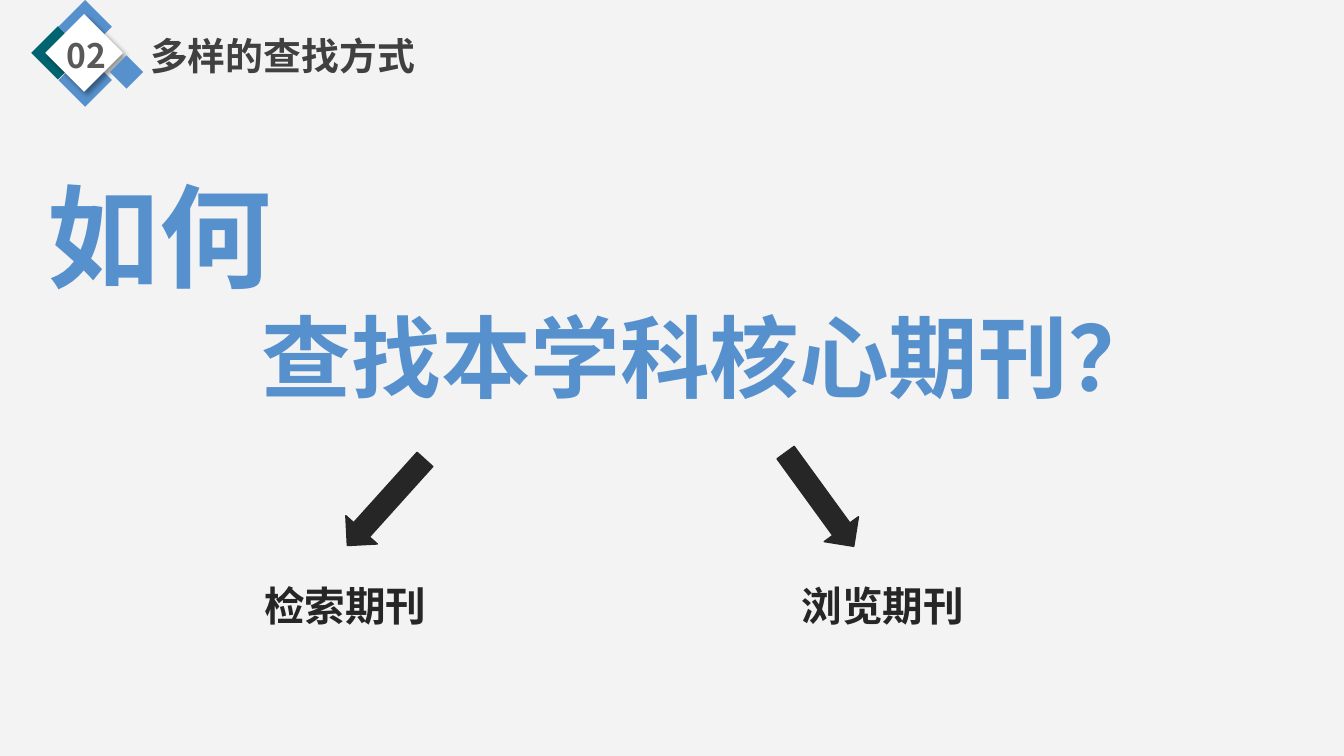
from dataclasses import dataclass

from lxml import etree
from pptx import Presentation
from pptx import util as u
from pptx.dml import color
from pptx.enum import shapes, text
from pptx.oxml import ns

PX = 9144
FONT = "Noto Sans CJK SC"
HUES = {
    "back": "F3F3F3",
    "blue": "5791CD",
    "teal": "006470",
    "white": "FFFFFF",
    "ink": "262626",
    "title": "404040",
    "badge": "595959",
    "shade": "000000",
}


@dataclass(frozen=True)
class Line:
    words: str
    size: int
    hue: str
    mid: bool = True
    shift: int = 0


@dataclass(frozen=True)
class Label:
    left: int
    top: int
    width: int
    height: int
    lines: tuple[Line, ...]
    wrap: bool = True
    grow: bool = True


@dataclass(frozen=True)
class Tile:
    x: int
    y: int
    side: int
    hue: str
    shade: bool = False


@dataclass(frozen=True)
class Arrow:
    left: int
    top: int
    turn: int


LABELS = (
    Label(34, 159, 1266, 283, (
        Line("如何", 80, "blue", mid=False),
        Line("查找本学科核心期刊？", 64, "blue", shift=74),
    )),
    Label(123, 569, 439, 63, (Line("检索期刊", 29, "ink"),)),
    Label(656, 569, 439, 63, (Line("浏览期刊", 29, "ink"),)),
    Label(136, 25, 292, 59, (Line("多样的查找方式", 27, "title", mid=False),), wrap=False),
)
BADGE = Label(49, 30, 74, 38, (Line("02", 24, "badge"),), grow=False)
ARROWS = (Arrow(362, 441, 42), Arrow(792, 438, 324))
TILES = (
    Tile(31, 26, 53, "teal"),
    Tile(58, 0, 53, "blue"),
    Tile(58, 53, 53, "blue"),
    Tile(45, 14, 77, "white", shade=True),
    Tile(109, 55, 33, "blue"),
)


def px(*sizes: int) -> list[u.Emu]:
    return [u.Emu(size * PX) for size in sizes]


def rgb(hue: str) -> color.RGBColor:
    return color.RGBColor.from_string(HUES[hue])


def write(para, line: Line) -> None:
    para.text = line.words
    para.alignment = text.PP_ALIGN.CENTER if line.mid else text.PP_ALIGN.LEFT
    if line.shift:
        props = para._p.get_or_add_pPr()
        props.set("marL", str(line.shift * PX))
        props.set("indent", "0")
    font = para.runs[0].font
    font.name, font.size, font.bold = FONT, u.Pt(line.size), True
    font.color.rgb = rgb(line.hue)
    east = etree.SubElement(font._element, ns.qn("a:ea"))
    east.set("typeface", FONT)


def draw_label(slide, label: Label) -> None:
    box = slide.shapes.add_textbox(*px(label.left, label.top, label.width, label.height))
    frame = box.text_frame
    frame.word_wrap = label.wrap
    if label.grow:
        frame.auto_size = text.MSO_AUTO_SIZE.SHAPE_TO_FIT_TEXT
        frame.margin_left, frame.margin_right = px(13, 13)
        frame.margin_top, frame.margin_bottom = px(7, 7)
    for spot, line in enumerate(label.lines):
        write(frame.add_paragraph() if spot else frame.paragraphs[0], line)


def add_solid(slide, kind, left: int, top: int, width: int, height: int, hue: str):
    shape = slide.shapes.add_shape(kind, *px(left, top, width, height))
    shape.shadow.inherit = False
    shape.fill.solid()
    shape.fill.fore_color.rgb = rgb(hue)
    return shape


def cast(shape) -> None:
    effects = shape._element.spPr.find(ns.qn("a:effectLst"))
    shadow = etree.SubElement(effects, ns.qn("a:outerShdw"))
    for key, value in (("blurRad", u.Pt(4)), ("dist", u.Pt(3)), ("dir", 45 * 60000)):
        shadow.set(key, str(int(value)))
    shadow.set("algn", "tl")
    shadow.set("rotWithShape", "0")
    tint = etree.SubElement(shadow, ns.qn("a:srgbClr"))
    tint.set("val", HUES["shade"])
    etree.SubElement(tint, ns.qn("a:alpha")).set("val", "40000")


def draw_tile(slide, tile: Tile) -> None:
    kind = shapes.MSO_SHAPE.DIAMOND
    shape = add_solid(slide, kind, tile.x, tile.y, tile.side, tile.side, tile.hue)
    shape.line.fill.background()
    if tile.shade:
        cast(shape)


def draw_arrow(slide, arrow: Arrow) -> None:
    kind = shapes.MSO_SHAPE.DOWN_ARROW
    shape = add_solid(slide, kind, arrow.left, arrow.top, 42, 115, "ink")
    shape.line.color.rgb = rgb("ink")
    shape.line.width = u.Pt(1)
    shape.rotation = arrow.turn


def main() -> None:
    deck = Presentation()
    deck.slide_width, deck.slide_height = px(1333, 750)
    slide = deck.slides.add_slide(deck.slide_layouts[6])
    slide.background.fill.solid()
    slide.background.fill.fore_color.rgb = rgb("back")
    for label in LABELS:
        draw_label(slide, label)
    for arrow in ARROWS:
        draw_arrow(slide, arrow)
    for tile in TILES:
        draw_tile(slide, tile)
    draw_label(slide, BADGE)
    deck.save("out.pptx")


if __name__ == "__main__":
    main()
